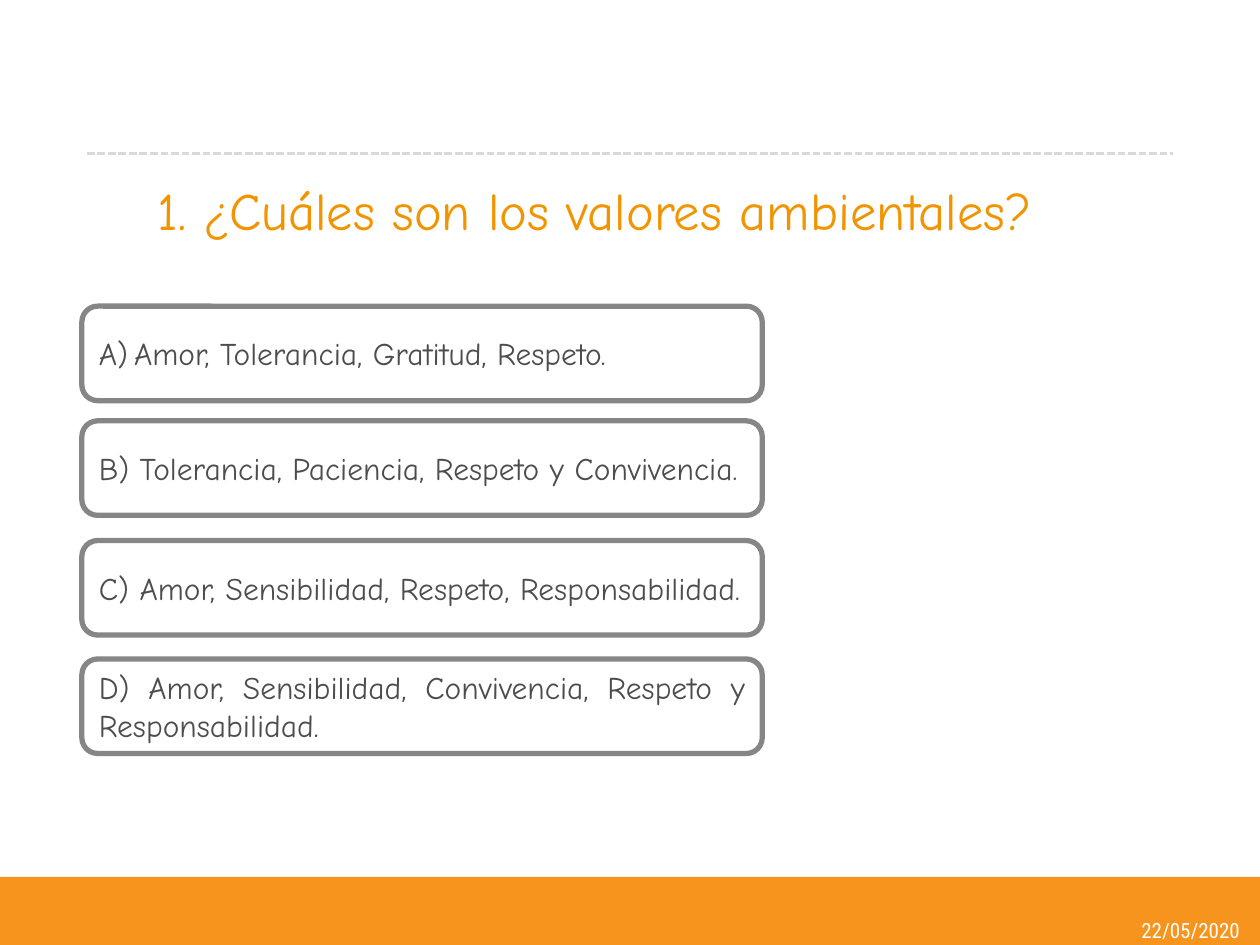
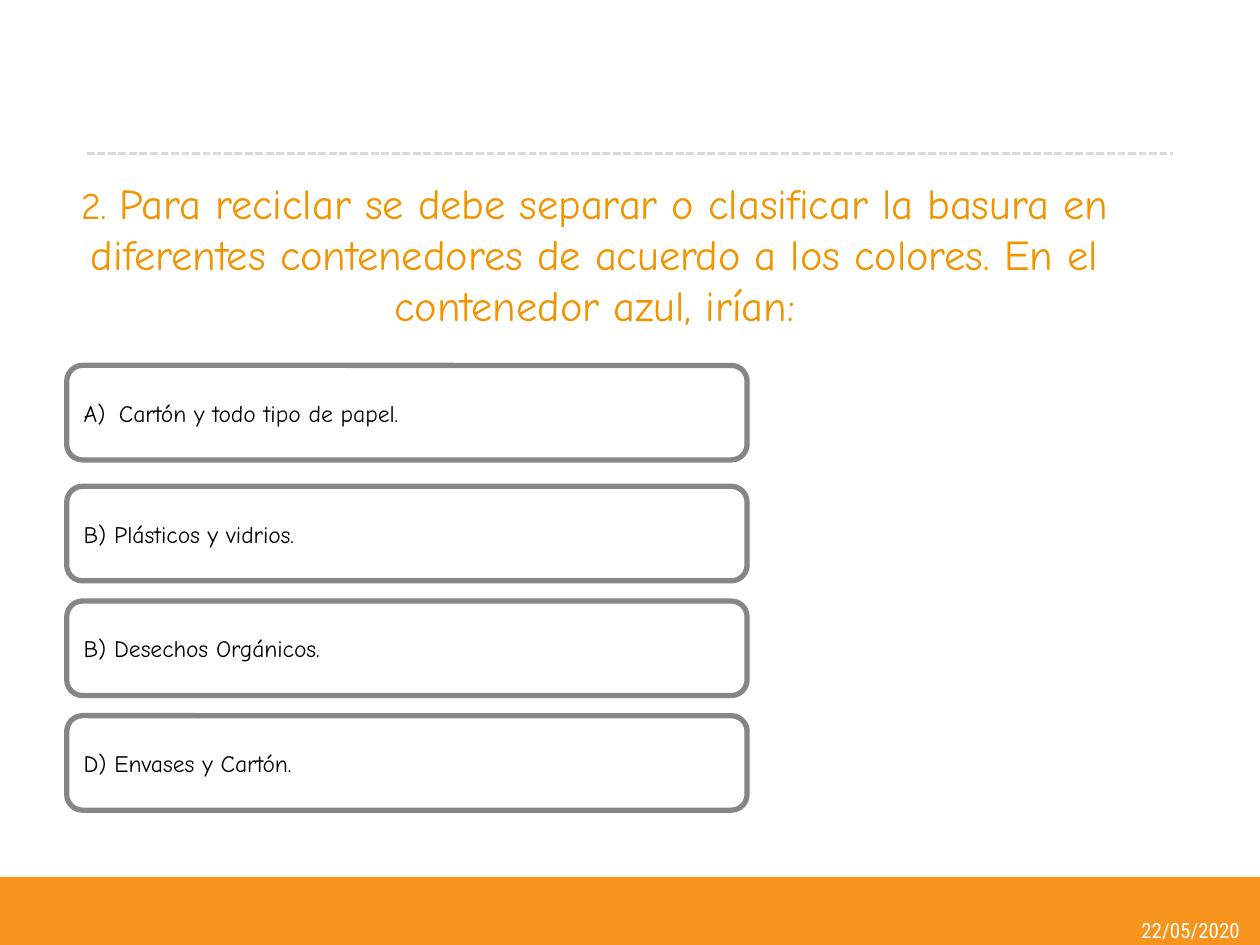
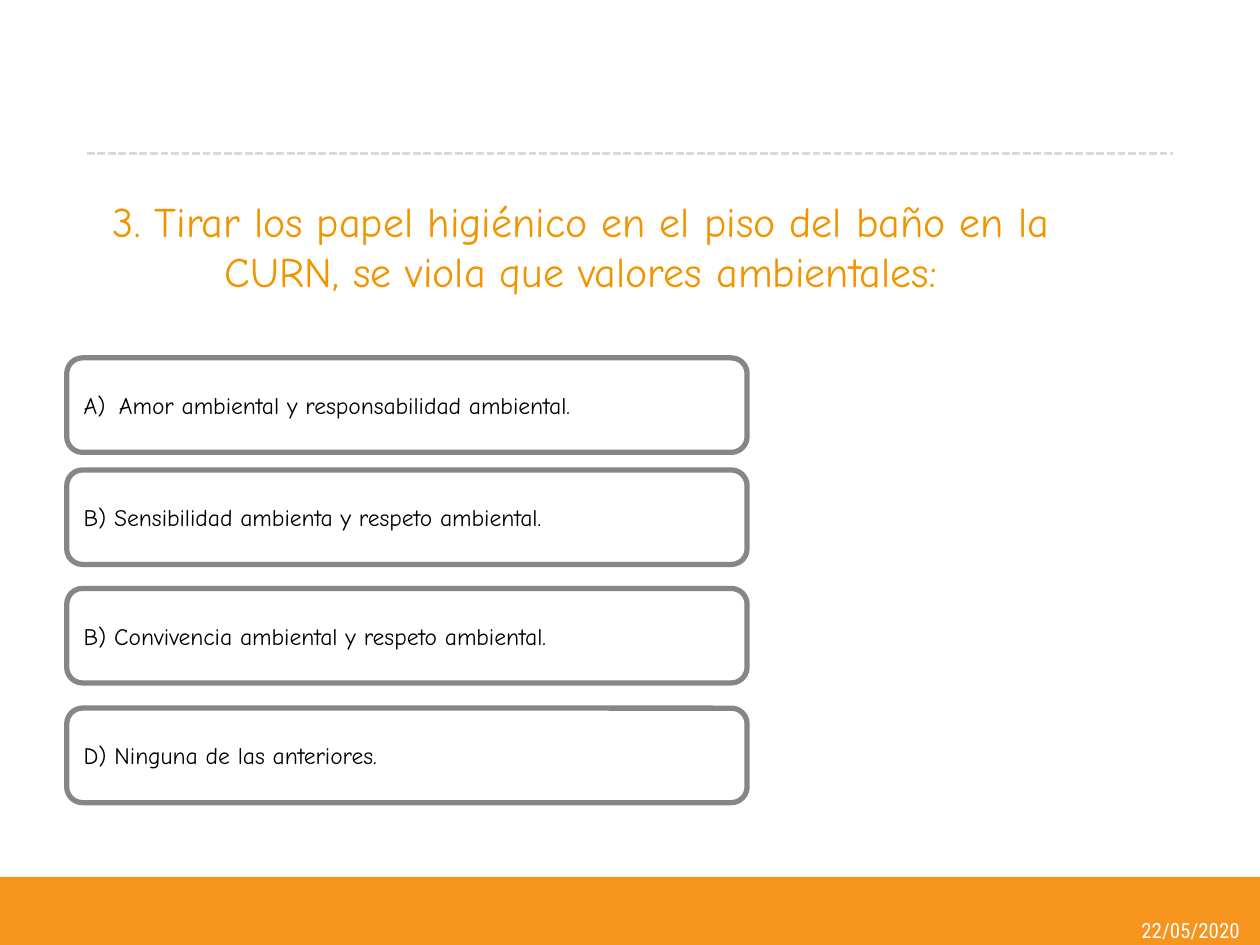
"""Build three quiz slides on environmental values and recycling."""
from lxml.etree import SubElement
from pptx import Presentation
from pptx.dml.color import RGBColor
from pptx.enum.dml import MSO_LINE
from pptx.enum.shapes import MSO_CONNECTOR, MSO_SHAPE
from pptx.enum.text import MSO_ANCHOR, PP_ALIGN
from pptx.oxml.ns import qn
from pptx.util import Inches, Pt

ORANGE = RGBColor(0xF7, 0x94, 0x1D)
TITLE_ORANGE = RGBColor(0xF2, 0x94, 0x00)
RULE_GRAY = RGBColor(0xD9, 0xD9, 0xD9)
BORDER_GRAY = RGBColor(0x86, 0x86, 0x86)
TEXT_GRAY = RGBColor(0x4D, 0x4D, 0x4F)
BLACK = RGBColor(0x00, 0x00, 0x00)
WHITE = RGBColor(0xFF, 0xFF, 0xFF)

HAND_FONT = "Comic Neue"
DATE_FONT = "Roboto Condensed"
COLUMNS, ROWS = 100, 75
ANSWER_WIDTH, ANSWER_HEIGHT = 54, 7.5
LETTER_INDENT = Inches(0.28)

QUESTIONS = [
    {
        "title": [("1. ¿Cuáles son los valores ambientales?", 30)],
        "title_area": (4.1, 11.2, 86.2, 10.9),
        "answer_left": 6.5,
        "answer_tops": (24.3, 33.4, 42.9, 52.3),
        "answer_size": 18,
        "answer_color": TEXT_GRAY,
        "answers": (
            "Amor, Tolerancia, Gratitud, Respeto.",
            "B) Tolerancia, Paciencia, Respeto y Convivencia.",
            "C) Amor, Sensibilidad, Respeto, Responsabilidad.",
            "D) Amor, Sensibilidad, Convivencia, Respeto y Responsabilidad.",
        ),
    },
    {
        "title": [
            ("2. ", 21.6),
            ("Para reciclar se debe separar o clasificar la basura en "
             "diferentes contenedores de acuerdo a los colores. "
             "En el contenedor azul, irían:", 24.3),
        ],
        "title_area": (4.1, 11.2, 86.2, 17.8),
        "answer_left": 5.3,
        "answer_tops": (29, 38.6, 47.7, 56.8),
        "answer_size": 13.5,
        "answer_color": BLACK,
        "answers": (
            "Cartón y todo tipo de papel.",
            "B) Plásticos y vidrios.",
            "B) Desechos Orgánicos.",
            "D) Envases y Cartón.",
        ),
    },
    {
        "title": [("3. Tirar los papel higiénico en el piso del baño en la CURN, "
                   "se viola que valores ambientales:", 24)],
        "title_area": (3, 10.6, 86.2, 17.8),
        "answer_left": 5.3,
        "answer_tops": (28.4, 37.3, 46.7, 56.2),
        "answer_size": 13.5,
        "answer_color": BLACK,
        "answers": (
            "Amor ambiental y responsabilidad ambiental.",
            "B) Sensibilidad ambienta y respeto ambiental.",
            "B) Convivencia ambiental y respeto ambiental.",
            "D) Ninguna de las anteriores.",
        ),
    },
]

deck = Presentation()
deck.slide_width, deck.slide_height = Inches(10), Inches(7.5)
blank = deck.slide_layouts[6]


def place(left, top, width, height):
    """Turn grid columns and rows into slide lengths."""
    column, row = deck.slide_width / COLUMNS, deck.slide_height / ROWS
    return [round(n) for n in (left * column, top * row, width * column, height * row)]


def write(frame, runs, font_name, color, align, **frame_format):
    """Fill a frame with one paragraph of (text, size) runs."""
    frame_format = {"word_wrap": True, "vertical_anchor": MSO_ANCHOR.MIDDLE} | frame_format
    for key, value in frame_format.items():
        setattr(frame, key, value)
    paragraph = frame.paragraphs[0]
    paragraph.alignment = align
    for text, size in runs:
        run = paragraph.add_run()
        run.text = text
        for key, value in {"name": font_name, "size": Pt(size)}.items():
            setattr(run.font, key, value)
        run.font.color.rgb = color
    return paragraph


for question in QUESTIONS:
    slide = deck.slides.add_slide(blank)
    shapes = slide.shapes

    band = shapes.add_shape(MSO_SHAPE.RECTANGLE, *place(0, 69.6, COLUMNS, 5.6))
    band.shadow.inherit = False
    band.fill.solid()
    band.fill.fore_color.rgb = ORANGE
    band.line.fill.background()

    date = shapes.add_textbox(*place(89.2, 72.8, 10.6, 2.1))
    no_margins = dict.fromkeys(
        ("margin_left", "margin_top", "margin_right", "margin_bottom"), 0)
    write(date.text_frame, [("22/05/2020", 12)], DATE_FONT, WHITE,
          PP_ALIGN.CENTER, **no_margins)

    rule = shapes.add_connector(MSO_CONNECTOR.STRAIGHT, *place(6.9, 12.2, 93.1, 12.2))
    SubElement(rule.line._get_or_add_ln().getparent(), qn("a:effectLst"))
    rule.line.color.rgb = RULE_GRAY
    rule.line.width = Pt(1.5)
    rule.line.dash_style = MSO_LINE.SQUARE_DOT

    title = shapes.add_textbox(*place(*question["title_area"]))
    write(title.text_frame, question["title"], HAND_FONT, TITLE_ORANGE, PP_ALIGN.CENTER)

    for top, text in zip(question["answer_tops"], question["answers"]):
        answer = shapes.add_shape(
            MSO_SHAPE.ROUNDED_RECTANGLE,
            *place(question["answer_left"], top, ANSWER_WIDTH, ANSWER_HEIGHT))
        answer.shadow.inherit = False
        answer.fill.solid()
        answer.fill.fore_color.rgb = WHITE
        answer.line.color.rgb = BORDER_GRAY
        answer.line.width = Pt(3)
        paragraph = write(answer.text_frame, [(text, question["answer_size"])],
                          HAND_FONT, question["answer_color"], PP_ALIGN.JUSTIFY)
        if text == question["answers"][0]:
            lettering = paragraph._p.get_or_add_pPr()
            lettering.set("marL", str(LETTER_INDENT))
            lettering.set("indent", str(-LETTER_INDENT))
            SubElement(lettering, qn("a:buFont"), typeface=HAND_FONT)
            SubElement(lettering, qn("a:buAutoNum"), type="alphaUcParenR")

deck.save("out.pptx")
